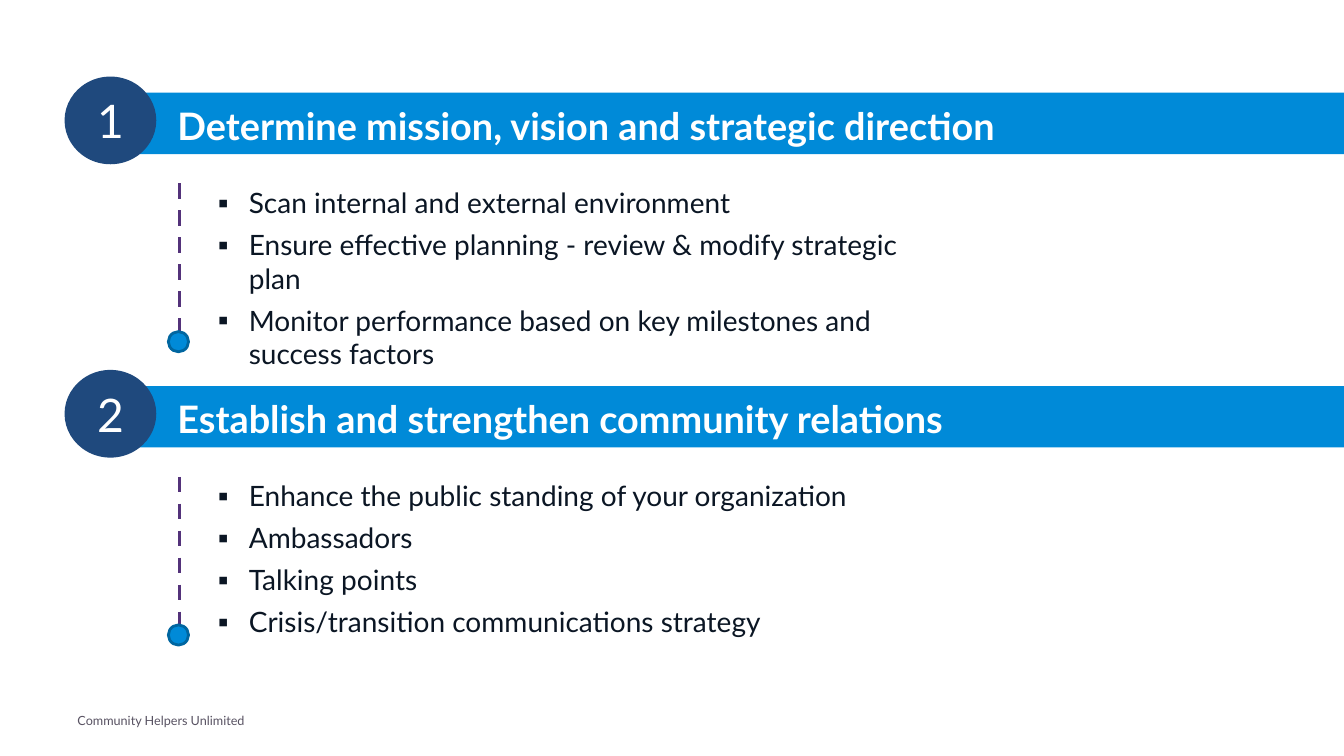
import pptx
import pptx.dml.color
import pptx.enum.dml
import pptx.enum.shapes
import pptx.enum.text
import pptx.oxml.ns
import pptx.util
from dataclasses import dataclass
from lxml import etree

Inches, Pt = pptx.util.Inches, pptx.util.Pt
SHAPES = pptx.enum.shapes.MSO_SHAPE
ANCHOR = pptx.enum.text.MSO_ANCHOR
ALIGN = pptx.enum.text.PP_ALIGN
FIT = pptx.enum.text.MSO_AUTO_SIZE.SHAPE_TO_FIT_TEXT

SECTIONS = [
    ("Determine mission, vision and strategic direction", [
        "Scan internal and external environment",
        "Ensure effective planning - review & modify strategic plan",
        "Monitor performance based on key milestones and success factors",
    ]),
    ("Establish and strengthen community relations", [
        "Enhance the public standing of your organization",
        "Ambassadors",
        "Talking points",
        "Crisis/transition communications strategy",
    ]),
]
FOOTER = "Community Helpers Unlimited"


@dataclass(frozen=True)
class Theme:
    font: str = "Lato"
    bar: str = "008AD8"
    badge: str = "1F497D"
    dash: str = "53327A"
    dot_edge: str = "0066A0"
    light: str = "FFFFFF"
    body: str = "0B1624"
    footer: str = "585262"
    heading_size: float = 27
    number_size: float = 33
    body_size: float = 20
    footer_size: float = 9


THEME = Theme()
SLIDE_WIDTH, SLIDE_HEIGHT = 13.33, 7.5
FIRST_TOP, SECTION_PITCH = 0.76, 2.91
BAR_LEFT = 1.11
DASH_X, DOT_SIZE = 1.78, 0.2
BULLET_INDENT = 0.31


def rgb(value):
    return pptx.dml.color.RGBColor.from_string(value)


def style(paragraph, size, color, bold=False):
    font = paragraph.font
    font.name, font.size, font.bold = THEME.font, Pt(size), bold
    font.color.rgb = rgb(color)


def add_filled(shapes, kind, left, top, width, height, fill):
    shape = shapes.add_shape(kind, Inches(left), Inches(top), Inches(width), Inches(height))
    shape.shadow.inherit = False
    shape.fill.solid()
    shape.fill.fore_color.rgb = rgb(fill)
    shape.line.fill.background()
    return shape


def add_text_frame(shapes, left, top, width, height):
    box = shapes.add_textbox(Inches(left), Inches(top), Inches(width), Inches(height))
    box.text_frame.word_wrap = True
    return box.text_frame


def add_bullet(paragraph):
    properties = paragraph._p.get_or_add_pPr()
    properties.set("marL", str(Inches(BULLET_INDENT)))
    properties.set("indent", str(-Inches(BULLET_INDENT)))
    qn = pptx.oxml.ns.qn
    color = etree.SubElement(properties, qn("a:buClr"))
    etree.SubElement(color, qn("a:srgbClr"), val=THEME.body)
    etree.SubElement(properties, qn("a:buFont"), typeface=THEME.font)
    etree.SubElement(properties, qn("a:buChar"), char="▪")


def add_heading(shapes, heading, top):
    bar = add_filled(shapes, SHAPES.RECTANGLE, BAR_LEFT, top, SLIDE_WIDTH - BAR_LEFT, 0.61, THEME.bar)
    frame = bar.text_frame
    frame.margin_left, frame.margin_top = Inches(0.65), Inches(0.1)
    frame.vertical_anchor, frame.auto_size = ANCHOR.TOP, FIT
    frame.text = heading
    frame.paragraphs[0].alignment = ALIGN.LEFT
    style(frame.paragraphs[0], THEME.heading_size, THEME.light, bold=True)


def add_badge(shapes, number, top):
    badge = add_filled(shapes, SHAPES.OVAL, 0.64, top, 0.91, 0.87, THEME.badge)
    frame = badge.text_frame
    frame.vertical_anchor = ANCHOR.MIDDLE
    frame.text = str(number)
    frame.paragraphs[0].alignment = ALIGN.CENTER
    style(frame.paragraphs[0], THEME.number_size, THEME.light)


def add_points(shapes, points, top):
    frame = add_text_frame(shapes, 2.06, top, 7.21, 1.62)
    frame.auto_size = FIT
    frame.text = "\n".join(points)
    for paragraph in frame.paragraphs:
        paragraph.space_after = Pt(6)
        add_bullet(paragraph)
        style(paragraph, THEME.body_size, THEME.body)


def add_dashed_marker(shapes, top, bottom):
    line = shapes.add_connector(pptx.enum.shapes.MSO_CONNECTOR.STRAIGHT,
                                Inches(DASH_X), Inches(top), Inches(DASH_X), Inches(bottom))
    etree.SubElement(line._element.spPr, pptx.oxml.ns.qn("a:effectLst"))
    line.line.color.rgb = rgb(THEME.dash)
    line.line.width = Pt(2.75)
    line.line.dash_style = pptx.enum.dml.MSO_LINE.DASH
    dot = add_filled(shapes, SHAPES.OVAL, DASH_X - 0.11, bottom - DOT_SIZE,
                     DOT_SIZE, DOT_SIZE, THEME.bar)
    dot.line.color.rgb = rgb(THEME.dot_edge)
    dot.line.width = Pt(2)


def main():
    presentation = pptx.Presentation()
    presentation.slide_width = Inches(SLIDE_WIDTH)
    presentation.slide_height = Inches(SLIDE_HEIGHT)
    slide = presentation.slides.add_slide(presentation.slide_layouts[6])

    for index, (heading, points) in enumerate(SECTIONS):
        top = FIRST_TOP + index * SECTION_PITCH
        shapes = slide.shapes.add_group_shape().shapes
        add_heading(shapes, heading, top + 0.16)
        add_badge(shapes, index + 1, top)
        add_points(shapes, points, top + 1.03)
        add_dashed_marker(shapes, top + 1.06, top + 2.73)

    footer = add_text_frame(slide.shapes, 0.67, 6.95, 8.11, 0.4)
    footer.vertical_anchor = ANCHOR.MIDDLE
    footer.text = FOOTER
    style(footer.paragraphs[0], THEME.footer_size, THEME.footer)
    presentation.save("out.pptx")


if __name__ == "__main__":
    main()
